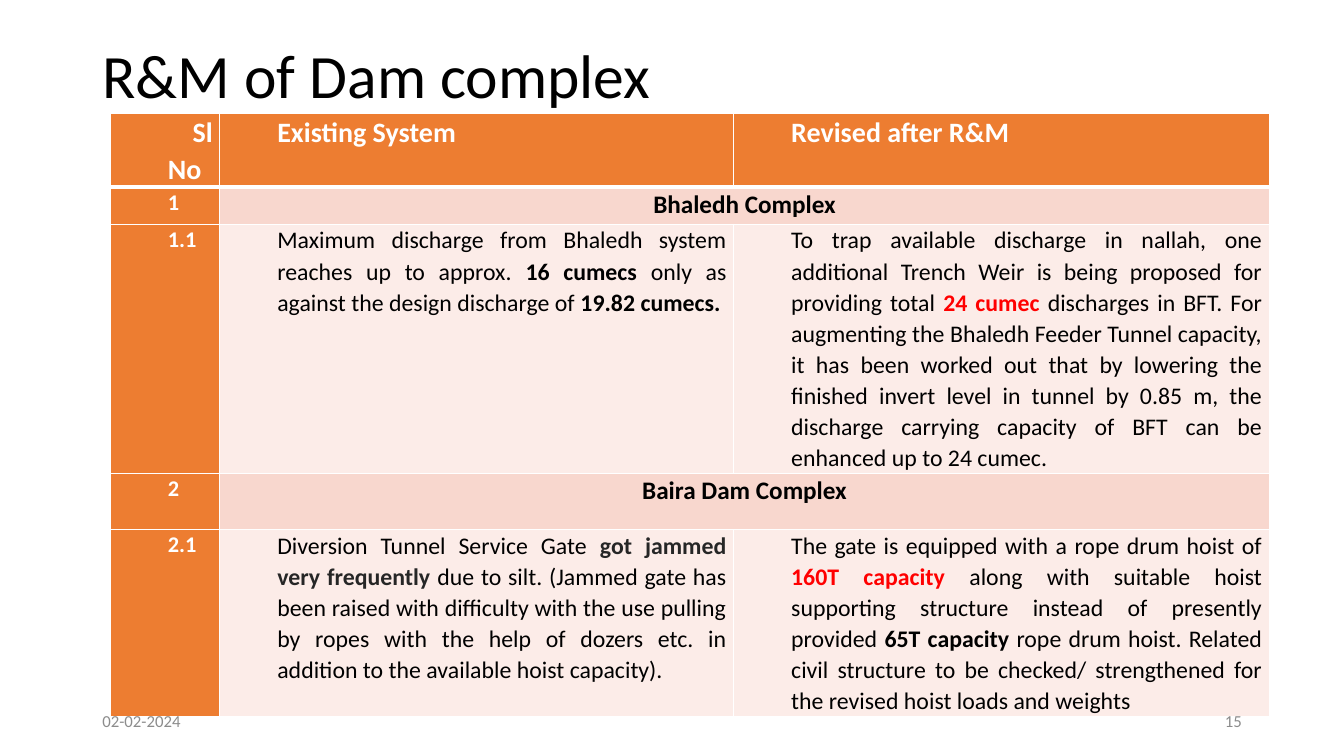
from lxml.etree import SubElement
from pptx import Presentation
from pptx.dml.color import RGBColor
from pptx.enum.text import MSO_ANCHOR, PP_ALIGN
from pptx.oxml.ns import qn
from pptx.util import Cm, Pt

WHITE, BLACK, RED, CHARCOAL, GREY = "FFFFFF", "000000", "FF0000", "262626", "8C8C8C"
ORANGE, PEACH, BLUSH = "ED7D31", "F8D7CE", "FCECE8"

COLUMN_WIDTHS = (2.76, 12.95, 13.5)
ROW_HEIGHTS = (1.85, 0.94, 6.27, 1.42, 4.7)
HEADINGS = (" Sl No", "Existing System", "Revised after R&M")
SECTIONS = {1: ("1", "Bhaledh Complex"), 3: ("2", "Baira Dam Complex")}
DETAILS = {
    2: (
        "1.1",
        [
            ("Maximum discharge from Bhaledh system reaches up to approx. ", BLACK, False),
            ("16 cumecs ", BLACK, True),
            ("only as against the design discharge of ", BLACK, False),
            ("19.82 cumecs.", BLACK, True),
        ],
        [
            ("To trap available discharge in nallah, one additional Trench Weir is being "
             "proposed for providing total ", BLACK, False),
            ("24 cumec ", RED, True),
            ("discharges in BFT. For augmenting the Bhaledh Feeder Tunnel capacity, it has "
             "been worked out that by lowering the finished invert level in tunnel by 0.85 m, "
             "the discharge carrying capacity of BFT can be enhanced up to 24 cumec.",
             BLACK, False),
        ],
    ),
    4: (
        "2.1",
        [
            ("Diversion Tunnel Service Gate ", BLACK, False),
            ("got jammed very frequently ", CHARCOAL, True),
            ("due to silt. (Jammed gate has been raised with difficulty with the use pulling "
             "by ropes with the help of dozers etc. in addition to the available hoist "
             "capacity).", BLACK, False),
        ],
        [
            ("The gate is equipped with a rope drum hoist of ", BLACK, False),
            ("160T capacity ", RED, True),
            ("along with suitable hoist supporting structure instead of presently provided ",
             BLACK, False),
            ("65T capacity ", BLACK, True),
            ("rope drum hoist. Related civil structure to be checked/ strengthened for the "
             "revised hoist loads and weights", BLACK, False),
        ],
    ),
}


def color(value):
    """Turn a hex string into a colour."""
    return RGBColor.from_string(value)


class SlideBuilder:
    """Hold the style and the slide being built."""

    font = "Calibri"

    def __init__(self, presentation):
        """Add a title-only slide."""
        self.slide = presentation.slides.add_slide(presentation.slide_layouts[5])

    def add_runs(self, paragraph, runs, size, alignment):
        """Fill a paragraph with (text, colour, bold) runs."""
        paragraph.alignment = alignment
        for text, run_color, bold in runs:
            run = paragraph.add_run()
            run.text = text
            run.font.name = self.font
            run.font.size = Pt(size)
            run.font.bold = bold
            run.font.color.rgb = color(run_color)

    def title(self, text, left, top, width, height):
        """Place and format the title placeholder."""
        shape = self.slide.shapes.title
        shape.left, shape.top, shape.width, shape.height = map(Cm, (left, top, width, height))
        shape.text_frame.vertical_anchor = MSO_ANCHOR.TOP
        paragraph = shape.text_frame.paragraphs[0]
        paragraph.line_spacing = 0.9
        self.add_runs(paragraph, [(text, BLACK, False)], 44, PP_ALIGN.LEFT)

    def footer(self, text, left, alignment):
        """Add a small grey text at the foot of the slide."""
        frame = self.slide.shapes.add_textbox(Cm(left), Cm(17.65), Cm(7.62), Cm(1.02)).text_frame
        frame.word_wrap = True
        frame.vertical_anchor = MSO_ANCHOR.MIDDLE
        self.add_runs(frame.paragraphs[0], [(text, GREY, False)], 12, alignment)

    def table(self, left, top, widths, heights):
        """Add a table with the given column widths and row heights."""
        table = self.slide.shapes.add_table(
            len(heights), len(widths), Cm(left), Cm(top), Cm(sum(widths)), Cm(sum(heights))
        ).table
        for column, width in zip(table.columns, widths):
            column.width = Cm(width)
        for row, height in zip(table.rows, heights):
            row.height = Cm(height)
        for row_index in range(len(heights)):
            for column_index in range(len(widths)):
                self.borders(table.cell(row_index, column_index), row_index)
        return table

    def borders(self, cell, row_index):
        """Draw white cell borders, thicker between header and body."""
        heavy_edge = {0: "lnB", 1: "lnT"}.get(row_index)
        properties = cell._tc.get_or_add_tcPr()
        for edge in ("lnL", "lnR", "lnT", "lnB"):
            width = Pt(3 if edge == heavy_edge else 1)
            line = SubElement(properties, qn(f"a:{edge}"), w=str(width))
            fill = SubElement(line, qn("a:solidFill"))
            SubElement(fill, qn("a:srgbClr"), val=WHITE)

    def cell(self, cell, runs, size, fill, centered=False):
        """Fill a cell with colour and one paragraph of runs."""
        cell.fill.solid()
        cell.fill.fore_color.rgb = color(fill)
        cell.margin_left = cell.margin_right = Cm(0.18)
        cell.margin_top = cell.margin_bottom = 0
        paragraph = cell.text_frame.paragraphs[0]
        paragraph.line_spacing = 1.07
        if not centered:
            paragraph._p.get_or_add_pPr().set("marL", str(Cm(1.27)))
        self.add_runs(paragraph, runs, size, PP_ALIGN.CENTER if centered else PP_ALIGN.JUSTIFY)


def main():
    """Build and save the slide."""
    presentation = Presentation()
    presentation.slide_width, presentation.slide_height = Cm(33.87), Cm(19.05)
    builder = SlideBuilder(presentation)
    builder.title("R&M of Dam complex", 2.33, 1.02, 29.21, 3.68)

    table = builder.table(2.78, 2.86, COLUMN_WIDTHS, ROW_HEIGHTS)
    for column, heading in enumerate(HEADINGS):
        builder.cell(table.cell(0, column), [(heading, WHITE, True)], 20, ORANGE)
    for row, (number, name) in SECTIONS.items():
        table.cell(row, 1).merge(table.cell(row, 2))
        builder.cell(table.cell(row, 0), [(number, WHITE, True)], 16, ORANGE)
        builder.cell(table.cell(row, 1), [(name, BLACK, True)], 18, PEACH, centered=True)
    for row, (number, existing, revised) in DETAILS.items():
        builder.cell(table.cell(row, 0), [(number, WHITE, True)], 16, ORANGE)
        builder.cell(table.cell(row, 1), existing, 17, BLUSH)
        builder.cell(table.cell(row, 2), revised, 17, BLUSH)

    builder.footer("02-02-2024", 2.33, PP_ALIGN.LEFT)
    builder.footer("15", 23.93, PP_ALIGN.RIGHT)
    presentation.save("out.pptx")


if __name__ == "__main__":
    main()
